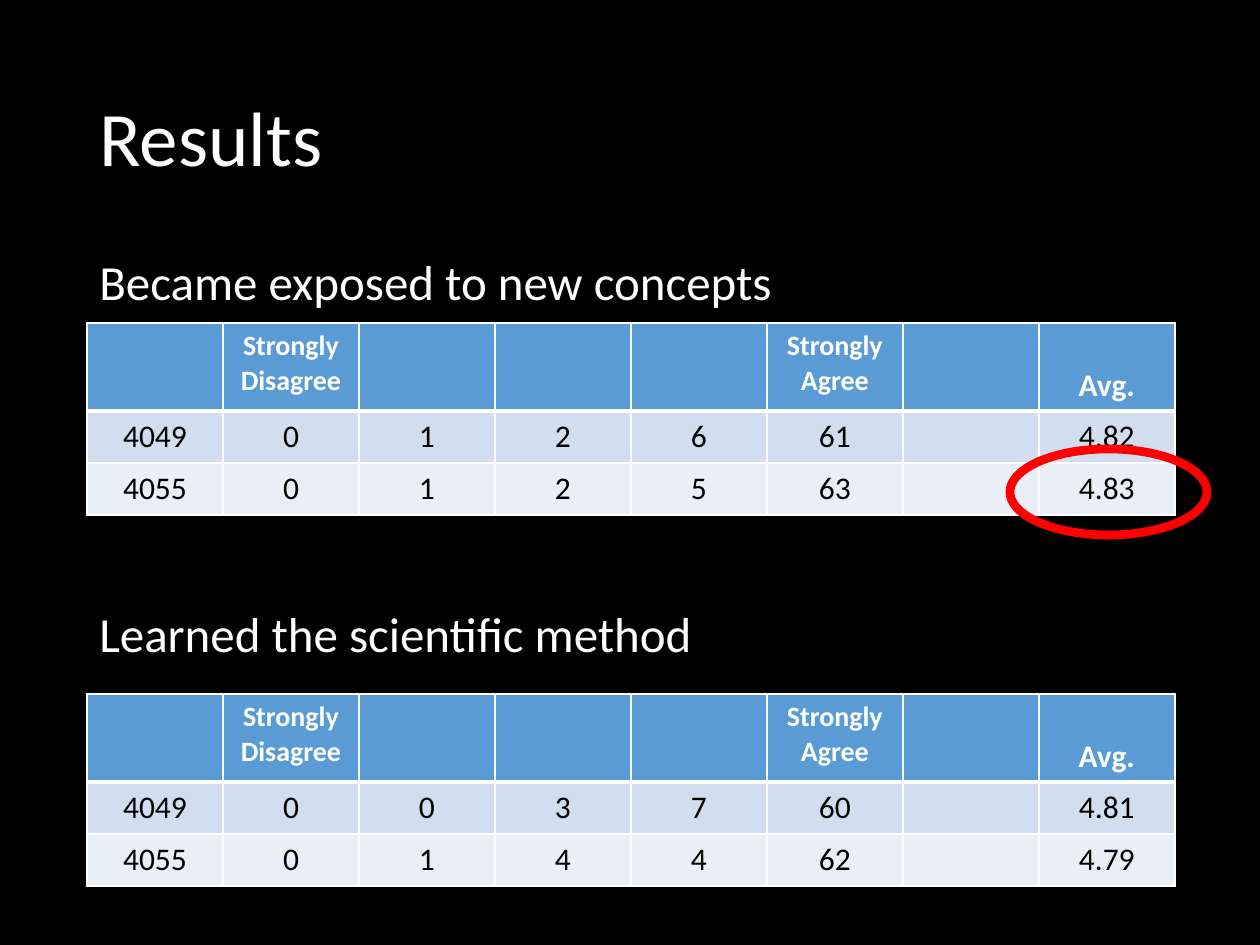
from lxml.etree import SubElement
from pptx import Presentation
from pptx.dml.color import RGBColor
from pptx.enum.shapes import MSO_SHAPE
from pptx.enum.text import MSO_ANCHOR, PP_ALIGN
from pptx.oxml.ns import qn
from pptx.util import Emu, Pt

SCALE = 914400 // 126
LEFT, WIDTH = 87, 1088
HEADER_HEIGHT, ROW_HEIGHT = 88, 52
WHITE, BLACK, RED = "FFFFFF", "000000", "FF0000"
HEADER_FILL, ROW_FILLS = "5B9BD5", ("D2DEEF", "EAEFF7")
HEADINGS = ["", "Strongly Disagree", "", "", "", "Strongly Agree", "", "Avg."]


def px(length):
    return Emu(length * SCALE)


def color(value):
    return RGBColor.from_string(value)


def write(frame, text, font_color=WHITE, align=PP_ALIGN.LEFT, spacing=1.0, **formats):
    paragraph = frame.paragraphs[0]
    paragraph.alignment = align
    paragraph.line_spacing = spacing
    run = paragraph.add_run()
    run.text = text
    run.font.color.rgb = color(font_color)
    for name, value in {"name": "Calibri", **formats}.items():
        setattr(run.font, name, value)


def add_text(slide, box, text, size, anchor=MSO_ANCHOR.TOP):
    frame = slide.shapes.add_textbox(*map(px, box)).text_frame
    frame.word_wrap = True
    frame.vertical_anchor = anchor
    write(frame, text, spacing=0.9, size=Pt(size))


def add_borders(cell, bottom):
    properties = cell._tc.get_or_add_tcPr()
    widths = {"a:lnL": 1, "a:lnR": 1, "a:lnT": 1, "a:lnB": bottom}
    for index, (tag, width) in enumerate(widths.items()):
        line = SubElement(properties, qn(tag), w=str(Pt(width)))
        fill = SubElement(line, qn("a:solidFill"))
        SubElement(fill, qn("a:srgbClr"), val=WHITE)
        properties.insert(index, line)


def style_cell(cell, text, fill, bottom=1, **formats):
    cell.fill.solid()
    cell.fill.fore_color.rgb = color(fill)
    add_borders(cell, bottom)
    if text:
        write(cell.text_frame, text, align=PP_ALIGN.CENTER, **formats)


def add_result(slide, left, top, width, caption, table_offset, rows):
    """A caption with its table of answers below."""
    add_text(slide, (left, top, width, 66), caption, 28)
    height = HEADER_HEIGHT + ROW_HEIGHT * len(rows)
    box = (left, top + table_offset, width, height)
    table = slide.shapes.add_table(len(rows) + 1, len(HEADINGS), *map(px, box)).table
    for column in table.columns:
        column.width = px(width // len(HEADINGS))
    for index, row in enumerate(table.rows):
        row.height = px(ROW_HEIGHT if index else HEADER_HEIGHT)

    # Header row
    for column, heading in enumerate(HEADINGS):
        cell = table.cell(0, column)
        is_average = heading == "Avg."
        style_cell(cell, heading, HEADER_FILL, bottom=3,
                   size=Pt(18 if is_average else 16), bold=True)
        if is_average:
            cell.vertical_anchor = MSO_ANCHOR.BOTTOM

    # Answer rows
    for index, values in enumerate(rows):
        for column, value in enumerate(values):
            style_cell(table.cell(index + 1, column), value, ROW_FILLS[index % 2],
                       font_color=BLACK, size=Pt(18), bold=False)


def add_highlight(slide, box):
    ellipse = slide.shapes.add_shape(MSO_SHAPE.OVAL, *map(px, box))
    ellipse.shadow.inherit = False
    ellipse.fill.background()
    ellipse.line.color.rgb = color(RED)
    ellipse.line.width = Pt(5)


def main():
    presentation = Presentation()
    presentation.slide_width, presentation.slide_height = px(1260), px(945)
    slide = presentation.slides.add_slide(presentation.slide_layouts[6])
    slide.background.fill.solid()
    slide.background.fill.fore_color.rgb = color(BLACK)

    add_text(slide, (LEFT, 50, WIDTH, 183), "Results", 44, MSO_ANCHOR.MIDDLE)
    add_result(slide, LEFT, 252, WIDTH, "Became exposed to new concepts", 71, [
        ["4049", "0", "1", "2", "6", "61", "", "4.82"],
        ["4055", "0", "1", "2", "5", "63", "", "4.83"],
    ])
    add_result(slide, LEFT, 604, WIDTH, "Learned the scientific method", 90, [
        ["4049", "0", "0", "3", "7", "60", "", "4.81"],
        ["4055", "0", "1", "4", "4", "62", "", "4.79"],
    ])
    add_highlight(slide, (1010, 449, 197, 86))
    presentation.save("out.pptx")


if __name__ == "__main__":
    main()
